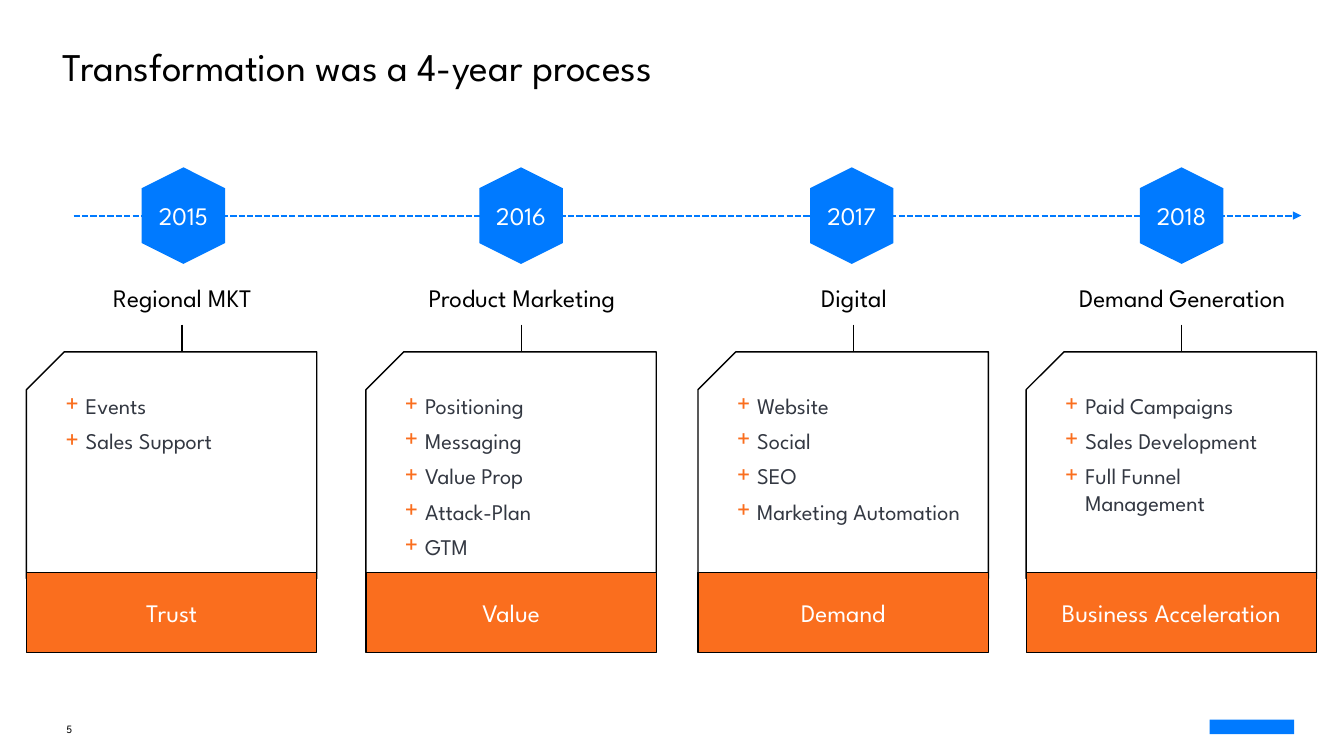
from pptx import Presentation
from pptx.dml.color import RGBColor
from pptx.enum.dml import MSO_LINE as Dash
from pptx.enum.shapes import MSO_CONNECTOR as Link, MSO_SHAPE as Form
from pptx.enum.text import MSO_ANCHOR as Anchor, PP_ALIGN as Align
from pptx.oxml.ns import qn
from pptx.util import Pt
from lxml.etree import SubElement

BLACK = RGBColor(0x00, 0x00, 0x00)
WHITE = RGBColor(0xFF, 0xFF, 0xFF)
BLUE = RGBColor(0x00, 0x7A, 0xFF)
ORANGE = RGBColor(0xFA, 0x6E, 0x1E)
GREY = RGBColor(0x33, 0x38, 0x42)
FONT = "League Spartan"

deck = Presentation()
deck.slide_width = Pt(960)
deck.slide_height = Pt(540)
slide = deck.slides.add_slide(deck.slide_layouts[6])
shapes = slide.shapes


def write(shape, text, size, color, align=Align.LEFT, anchor=Anchor.TOP, wrap=True):
    frame = shape.text_frame
    frame.text = text
    frame.word_wrap = wrap
    frame.vertical_anchor = anchor
    for para in frame.paragraphs:
        para.alignment = align
        for run in para.runs:
            run.font.name = FONT
            run.font.size = Pt(size)
            run.font.color.rgb = color
    return frame


def draw(form, left, top, width, height, fill, edge=None):
    shape = shapes.add_shape(form, Pt(left), Pt(top), Pt(width), Pt(height))
    shape.shadow.inherit = False
    shape.fill.solid()
    shape.fill.fore_color.rgb = fill
    if edge is None:
        shape.line.fill.background()
    else:
        shape.line.color.rgb = edge
        shape.line.width = Pt(1)
    return shape


title = shapes.add_textbox(Pt(37.4), Pt(-18.7), Pt(885.6), Pt(86.4))
frame = write(title, "Transformation was a 4-year process", 28, BLACK, anchor=Anchor.BOTTOM)
frame.paragraphs[0].line_spacing = 0.9

number = shapes.add_textbox(Pt(40.3), Pt(500.4), Pt(216), Pt(28.8))
write(number, "5", 8, BLACK, anchor=Anchor.BOTTOM)
draw(Form.RECTANGLE, 864, 514, 60.5, 10.5, BLUE)

AXIS = 154
for start, end in ((52.6, 147.6), (122.4, 383), (399.6, 609.8), (635.8, 929.5)):
    line = shapes.add_connector(Link.STRAIGHT, Pt(start), Pt(AXIS), Pt(end), Pt(AXIS))
    line.line.color.rgb = BLUE
    line.line.width = Pt(1.5)
    line.line.dash_style = Dash.SQUARE_DOT
    SubElement(line.line._get_or_add_ln(), qn("a:tailEnd"), type="triangle")
    SubElement(line.element.spPr, qn("a:effectLst"))

years = [
    ("2015", 131, 18.9, "Regional MKT", "Trust", ["Events", "Sales Support"]),
    ("2016", 372.2, 261.4, "Product Marketing", "Value",
     ["Positioning", "Messaging", "Value Prop", "Attack-Plan", "GTM"]),
    ("2017", 608.4, 498.6, "Digital", "Demand",
     ["Website", "Social", "SEO", "Marketing Automation"]),
    ("2018", 844, 733, "Demand Generation", "Business Acceleration",
     ["Paid Campaigns", "Sales Development", "Full Funnel Management"]),
]
WIDE = 207.4

for year, mid, left, theme, result, items in years:
    hexa = draw(Form.HEXAGON, mid - 34.5, AXIS - 29.8, 69, 59.6, BLUE)
    hexa.rotation = 270
    label = shapes.add_textbox(Pt(mid - 27.4), Pt(139.2), Pt(54.8), Pt(28.8))
    write(label, year, 18, WHITE, Align.CENTER, wrap=False)

    head = shapes.add_textbox(Pt(left + 7.7), Pt(198.2), Pt(WIDE), Pt(28.8))
    write(head, theme, 18, BLACK, Align.CENTER)

    stem = shapes.add_connector(
        Link.STRAIGHT, Pt(left + 111), Pt(231.8), Pt(left + 111), Pt(264.2))
    stem.line.color.rgb = BLACK
    stem.line.width = Pt(1)
    SubElement(stem.element.spPr, qn("a:effectLst"))

    card = draw(Form.SNIP_1_RECTANGLE, left, 251.3, WIDE, 162, WHITE, BLACK)
    card.element.spPr.get_or_add_xfrm().set("flipH", "1")

    tall = 26.4 + 25.4 * len(items)
    tasks = shapes.add_textbox(Pt(left + 20.8), Pt(276.5), Pt(181.4), Pt(tall))
    frame = write(tasks, "\n".join(items), 16, GREY)
    for para in frame.paragraphs:
        props = para._p.get_or_add_pPr()
        props.set("marL", str(Pt(14.4)))
        props.set("indent", str(-Pt(14.4)))
        tint = SubElement(props, qn("a:buClr"))
        SubElement(tint, qn("a:srgbClr"), val=str(ORANGE))
        SubElement(props, qn("a:buChar"), char="+")
        para.space_after = Pt(6)

    base = draw(Form.RECTANGLE, left, 409, WIDE, 57, ORANGE, BLACK)
    write(base, result, 18, WHITE, Align.CENTER, Anchor.MIDDLE)

deck.save("out.pptx")
